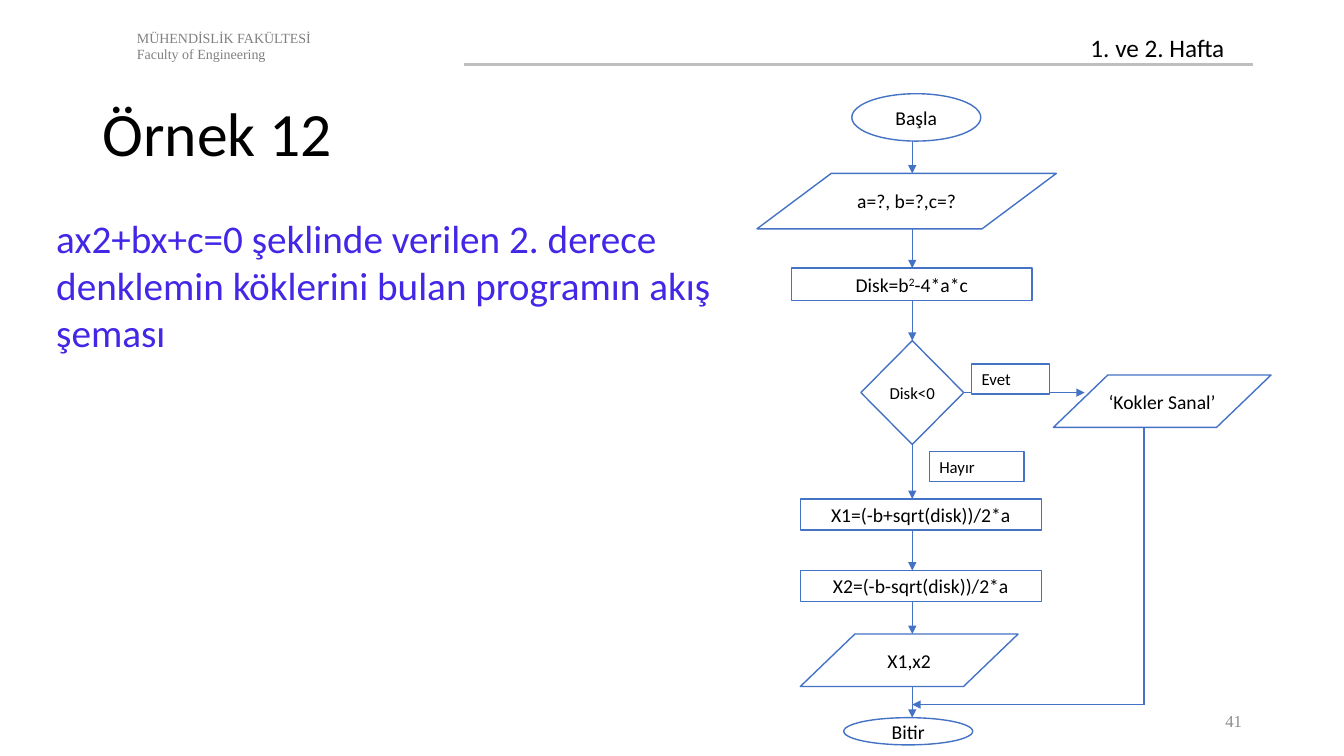
from dataclasses import dataclass
from itertools import pairwise
from typing import Optional

from lxml import etree
from pptx import Presentation
from pptx.dml.color import RGBColor
from pptx.enum.shapes import MSO_CONNECTOR, MSO_SHAPE
from pptx.enum.text import MSO_ANCHOR, PP_ALIGN
from pptx.oxml.ns import qn
from pptx.util import Inches, Pt

# Grid: every column and row is a tenth of an inch
CELL = Inches(0.1)
COLUMNS, ROWS = 133.33, 75
SPINE = 90.5
RETURN_COLUMN, RETURN_ROW = 113.5, 69.9

BLACK = RGBColor(0x00, 0x00, 0x00)
WHITE = RGBColor(0xFF, 0xFF, 0xFF)
FLOW_BLUE = RGBColor(0x44, 0x72, 0xC4)
TASK_VIOLET = RGBColor(0x42, 0x27, 0xE7)
RULE_GREY = RGBColor(0xBF, 0xBF, 0xBF)
FACULTY_GREY = RGBColor(0x80, 0x80, 0x80)
NUMBER_GREY = RGBColor(0x8C, 0x8C, 0x8C)

SANS, SERIF = "Calibri", "Times New Roman"
STRAIGHT = MSO_CONNECTOR.STRAIGHT
OVAL, BOX = MSO_SHAPE.OVAL, MSO_SHAPE.RECTANGLE
DIAMOND, SLANTED = MSO_SHAPE.DIAMOND, MSO_SHAPE.PARALLELOGRAM
TOP, MIDDLE = MSO_ANCHOR.TOP, MSO_ANCHOR.MIDDLE
LEFT, CENTER, RIGHT = PP_ALIGN.LEFT, PP_ALIGN.CENTER, PP_ALIGN.RIGHT


@dataclass(frozen=True)
class Area:
    column: float
    row: float
    columns: float
    rows: float

    @property
    def bottom(self) -> float:
        return self.row + self.rows

    def lengths(self) -> list[int]:
        return [cells(n) for n in (self.column, self.row, self.columns, self.rows)]


@dataclass(frozen=True)
class Style:
    size: float
    color: RGBColor = BLACK
    font: str = SANS
    align: PP_ALIGN = LEFT
    anchor: MSO_ANCHOR = TOP
    wrap: bool = True
    line_spacing: Optional[float] = None


@dataclass(frozen=True)
class Caption:
    area: Area
    lines: tuple[str, ...]
    style: Style


@dataclass(frozen=True)
class Step:
    preset: MSO_SHAPE
    area: Area
    runs: tuple[str, ...]
    style: Style
    slant: Optional[float] = None
    raised_run: Optional[int] = None


STEP_STYLE = Style(14, align=CENTER, anchor=MIDDLE, wrap=False)
TEST_STYLE = Style(12, align=CENTER, anchor=MIDDLE, wrap=False)
ANSWER_STYLE = Style(12)

CAPTIONS = (
    Caption(Area(12.6, 2.4, 66.7, 4.4),
            ("MÜHENDİSLİK FAKÜLTESİ", "Faculty of Engineering"),
            Style(10, FACULTY_GREY, SERIF)),
    Caption(Area(107.2, 2.7, 17, 4), ("1. ve 2. Hafta",), Style(18)),
    Caption(Area(119.7, 69.5, 4.5, 4), ("41",),
            Style(12, NUMBER_GREY, SERIF, RIGHT, MIDDLE)),
    Caption(Area(4.6, 20.8, 67.3, 15.1),
            ("ax2+bx+c=0 şeklinde verilen 2. derece denklemin köklerini "
             "bulan programın akış şeması",),
            Style(28, TASK_VIOLET)),
    Caption(Area(9.2, 9.8, 115, 8.7), ("Örnek 12",), Style(44, line_spacing=0.9)),
)

TEST = Step(DIAMOND, Area(85.4, 33.8, 10.2, 10.3), ("Disk<0",), TEST_STYLE)
# Main path, top to bottom
MAIN_PATH = (
    Step(OVAL, Area(84.5, 9.3, 12.8, 4.7), ("Başla",), STEP_STYLE),
    Step(SLANTED, Area(75.1, 17.2, 29.7, 5.5), ("a=?, b=?,c=?",), STEP_STYLE, 1.34),
    Step(BOX, Area(78.5, 26.6, 23.9, 3.2), ("Disk=b", "2", "-4*a*c"), STEP_STYLE,
         raised_run=1),
    TEST,
    Step(BOX, Area(79.4, 49.5, 23.9, 3.1), ("X1=(-b+sqrt(disk))/2*a",), STEP_STYLE),
    Step(BOX, Area(79.4, 56.6, 23.9, 3.1), ("X2=(-b-sqrt(disk))/2*a",), STEP_STYLE),
    Step(SLANTED, Area(79.4, 62.9, 21.6, 5.2), ("X1,x2",), STEP_STYLE, 1.04),
    Step(OVAL, Area(83.7, 71.2, 12.8, 2.7), ("Bitir",), STEP_STYLE),
)
NO_ROOTS = Step(SLANTED, Area(104.5, 37.2, 21.6, 5.2), ("‘Kokler Sanal’",),
                STEP_STYLE, 1.04)
ANSWERS = (
    Step(BOX, Area(96.4, 36.1, 7.7, 3), ("Evet",), ANSWER_STYLE),
    Step(BOX, Area(92.2, 44.8, 9.4, 3), ("Hayır",), ANSWER_STYLE),
)


def cells(count: float) -> int:
    return round(count * CELL)


def write(frame, lines: tuple[tuple[str, ...], ...], style: Style,
          raised_run: Optional[int] = None) -> None:
    frame.word_wrap = style.wrap
    frame.vertical_anchor = style.anchor
    for line_index, runs in enumerate(lines):
        paragraph = frame.add_paragraph() if line_index else frame.paragraphs[0]
        paragraph.alignment = style.align
        if style.line_spacing:
            paragraph.line_spacing = style.line_spacing
        for run_index, words in enumerate(runs):
            run = paragraph.add_run()
            run.text = words
            run.font.size = Pt(style.size)
            run.font.name = style.font
            run.font.color.rgb = style.color
            if run_index == raised_run:
                run.font._element.set("baseline", "30000")


def draw_caption(slide, caption: Caption) -> None:
    box = slide.shapes.add_textbox(*caption.area.lengths())
    write(box.text_frame, tuple((line,) for line in caption.lines), caption.style)


def draw_step(slide, step: Step) -> None:
    shape = slide.shapes.add_shape(step.preset, *step.area.lengths())
    shape.shadow.inherit = False
    shape.fill.solid()
    shape.fill.fore_color.rgb = WHITE
    shape.line.color.rgb = FLOW_BLUE
    shape.line.width = Pt(1)
    if step.slant is not None:
        shape.adjustments[0] = step.slant
    write(shape.text_frame, (step.runs,), step.style, step.raised_run)


def draw_line(slide, start: tuple[float, float], end: tuple[float, float],
              color: RGBColor = FLOW_BLUE, width: float = 1,
              arrow: bool = True) -> None:
    line = slide.shapes.add_connector(STRAIGHT, *(cells(n) for n in start + end))
    line.line.color.rgb = color
    line.line.width = Pt(width)
    if arrow:
        etree.SubElement(line.line._get_or_add_ln(), qn("a:tailEnd"), type="triangle")
    etree.SubElement(line._element.spPr, qn("a:effectLst"))


def main() -> None:
    deck = Presentation()
    deck.slide_width, deck.slide_height = cells(COLUMNS), cells(ROWS)
    slide = deck.slides.add_slide(deck.slide_layouts[6])

    # Header rule and texts
    draw_line(slide, (46, 6.4), (124.3, 6.4), RULE_GREY, 1.5, arrow=False)
    for caption in CAPTIONS:
        draw_caption(slide, caption)

    # Flowchart steps
    for step in (*MAIN_PATH, NO_ROOTS):
        draw_step(slide, step)

    # Arrows down the main path
    for upper, lower in pairwise(MAIN_PATH):
        draw_line(slide, (SPINE, upper.area.bottom), (SPINE, lower.area.row))

    # Branch without real roots, and its way back
    test_row = TEST.area.row + TEST.area.rows / 2
    draw_line(slide, (TEST.area.column + TEST.area.columns, test_row), (107.6, test_row))
    draw_line(slide, (RETURN_COLUMN, NO_ROOTS.area.bottom),
              (RETURN_COLUMN, RETURN_ROW), arrow=False)
    draw_line(slide, (RETURN_COLUMN, RETURN_ROW), (SPINE, RETURN_ROW))

    # Answers to the test
    for answer in ANSWERS:
        draw_step(slide, answer)

    deck.save("out.pptx")


if __name__ == "__main__":
    main()
